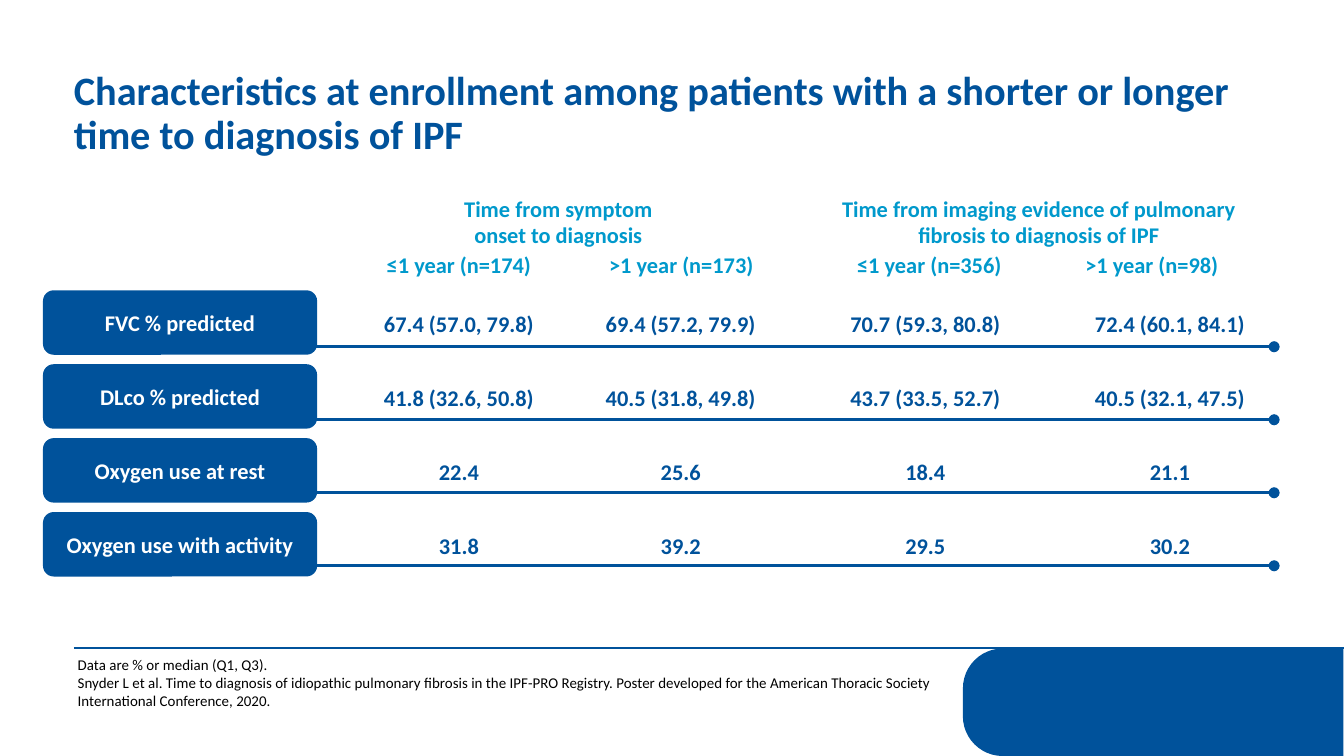
from lxml.etree import SubElement
from pptx import Presentation
from pptx.dml.color import RGBColor
from pptx.enum.shapes import MSO_CONNECTOR, MSO_SHAPE
from pptx.enum.text import MSO_ANCHOR, MSO_AUTO_SIZE, PP_ALIGN
from pptx.oxml.ns import qn
from pptx.util import Inches, Pt

BLUE, CYAN, WHITE, BLACK = "00529B", "0099CC", "FFFFFF", "000000"
FONT = "Calibri"

TITLE = "Characteristics at enrollment among patients with a shorter or longer time to diagnosis of IPF"
HEADERS = [
    (["Time from symptom", "onset to diagnosis"], 3.18, 1.4, 1.95, 0.5),
    (["Time from imaging evidence of pulmonary fibrosis to diagnosis of IPF"], 6.04, 1.4, 3.38, 0.5),
    (["≤1 year (n=174)"], 2.44, 1.82, 1.95, 0.3),
    ([">1 year (n=173)"], 3.93, 1.82, 2.28, 0.3),
    (["≤1 year (n=356)"], 5.94, 1.82, 1.95, 0.3),
    ([">1 year (n=98)"], 7.43, 1.82, 2.28, 0.3),
]
ROWS = [
    ("FVC % predicted", ["67.4 (57.0, 79.8)", "69.4 (57.2, 79.9)", "70.7 (59.3, 80.8)", "72.4 (60.1, 84.1)"]),
    ("DLco % predicted", ["41.8 (32.6, 50.8)", "40.5 (31.8, 49.8)", "43.7 (33.5, 52.7)", "40.5 (32.1, 47.5)"]),
    ("Oxygen use at rest", ["22.4", "25.6", "18.4", "21.1"]),
    ("Oxygen use with activity", ["31.8", "39.2", "29.5", "30.2"]),
]
FOOTNOTES = [
    "Data are % or median (Q1, Q3).",
    "Snyder L et al. Time to diagnosis of idiopathic pulmonary fibrosis in the IPF-PRO Registry. "
    "Poster developed for the American Thoracic Society International Conference, 2020.",
]
COLUMN_LEFTS = [2.46, 4.11, 5.93, 7.75]
ROW_TOP, ROW_STEP = 2.16, 0.55
RULE_TOP, RULE_BOTTOM = 2.58, 4.21


def color(value):
    return RGBColor.from_string(value)


def write(frame, lines, size, text_color, bold=True, align=PP_ALIGN.CENTER):
    frame.word_wrap = True
    frame.text = "\n".join(lines)
    for paragraph in frame.paragraphs:
        paragraph.alignment = align
        paragraph.font.name = FONT
        paragraph.font.size = Pt(size)
        paragraph.font.bold = bold
        paragraph.font.color.rgb = color(text_color)


def add_text(slide, lines, left, top, width, height, size=12, text_color=BLUE, **style):
    box = slide.shapes.add_textbox(Inches(left), Inches(top), Inches(width), Inches(height))
    write(box.text_frame, lines, size, text_color, **style)


def add_block(slide, preset, left, top, width, height):
    shape = slide.shapes.add_shape(preset, Inches(left), Inches(top), Inches(width), Inches(height))
    shape.shadow.inherit = False
    shape.fill.solid()
    shape.fill.fore_color.rgb = color(BLUE)
    shape.line.fill.background()
    return shape


def add_rule(slide, left, right, top, width, oval_ends=False):
    rule = slide.shapes.add_connector(
        MSO_CONNECTOR.STRAIGHT, Inches(left), Inches(top), Inches(right), Inches(top))
    rule.line.color.rgb = color(BLUE)
    rule.line.width = Pt(width)
    properties = rule._element.spPr
    if oval_ends:
        for end in ("a:headEnd", "a:tailEnd"):
            SubElement(properties.find(qn("a:ln")), qn(end), type="oval")
    SubElement(properties, qn("a:effectLst"))


def add_title(slide):
    title = slide.shapes.title
    title.left, title.top, title.width, title.height = map(Inches, (0.55, 0.48, 8.86, 0.74))
    frame = title.text_frame
    write(frame, [TITLE], 21.6, BLUE, align=PP_ALIGN.LEFT)
    frame.auto_size = MSO_AUTO_SIZE.NONE
    frame.vertical_anchor = MSO_ANCHOR.MIDDLE
    frame.margin_left = 0
    frame.paragraphs[0].line_spacing = 0.9


def add_footer(slide):
    corner = add_block(slide, MSO_SHAPE.ROUND_2_SAME_RECTANGLE, 8.18, 3.81, 0.8, 2.83)
    corner.rotation = 270
    corner.adjustments[0] = 0.37
    add_rule(slide, 0.55, 10, 4.82, 1.25)
    add_text(slide, FOOTNOTES, 0.48, 4.83, 6.68, 0.5, 8, BLACK, bold=False, align=PP_ALIGN.LEFT)


def add_row(slide, index, label, values):
    top = ROW_TOP + index * ROW_STEP
    rule_step = (RULE_BOTTOM - RULE_TOP) / (len(ROWS) - 1)
    add_rule(slide, 0.98, 9.48, RULE_TOP + index * rule_step, 1.5, oval_ends=True)
    block = add_block(slide, MSO_SHAPE.ROUNDED_RECTANGLE, 0.32, top, 2.04, 0.48)
    frame = block.text_frame
    frame.margin_left = frame.margin_right = 0
    frame.vertical_anchor = MSO_ANCHOR.MIDDLE
    write(frame, [label], 12, WHITE)
    for left, value in zip(COLUMN_LEFTS, values):
        add_text(slide, [value], left, top + 0.1, 1.91, 0.3)


def main():
    presentation = Presentation()
    presentation.slide_width = Inches(10)
    presentation.slide_height = presentation.slide_width * 9 // 16
    slide = presentation.slides.add_slide(presentation.slide_layouts[5])
    add_footer(slide)
    add_title(slide)
    for lines, left, top, width, height in HEADERS:
        add_text(slide, lines, left, top, width, height, text_color=CYAN)
    for index, (label, values) in enumerate(ROWS):
        add_row(slide, index, label, values)
    presentation.save("out.pptx")


if __name__ == "__main__":
    main()
